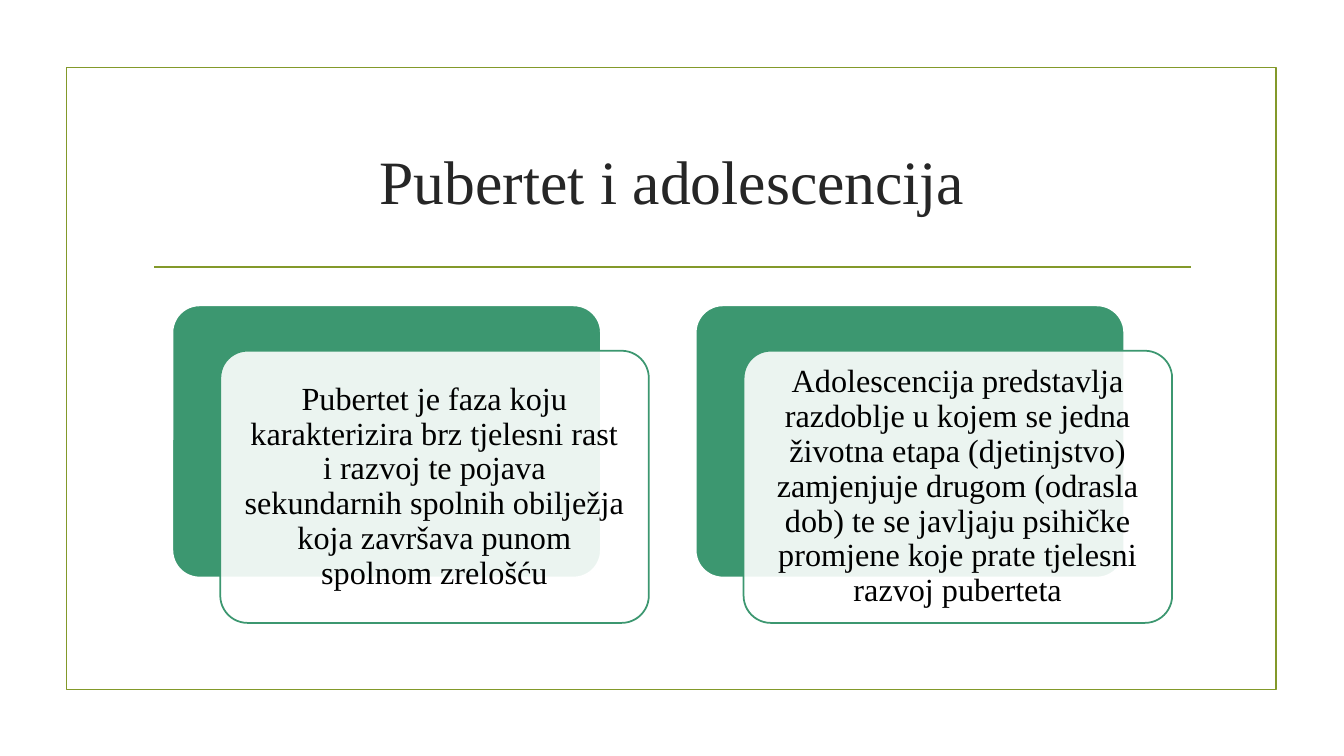
from lxml import etree
from pptx import Presentation
from pptx.dml.color import RGBColor
from pptx.enum import shapes as kinds
from pptx.enum import text as txt
from pptx.oxml.ns import qn
from pptx.util import Inches, Pt

OLIVE = RGBColor(0x83, 0x99, 0x2A)
GREEN = RGBColor(0x3C, 0x97, 0x70)
WHITE = RGBColor(0xFF, 0xFF, 0xFF)
BLACK = RGBColor(0, 0, 0)
CHARCOAL = RGBColor(0x26, 0x26, 0x26)
FONT = "Times New Roman"

DEFINITIONS = [
    "Pubertet je faza koju karakterizira brz tjelesni rast i razvoj te pojava "
    "sekundarnih spolnih obilježja koja završava punom spolnom zrelošću",
    "Adolescencija predstavlja razdoblje u kojem se jedna životna etapa "
    "(djetinjstvo) zamjenjuje drugom (odrasla dob) te se javljaju psihičke "
    "promjene koje prate tjelesni razvoj puberteta",
]


def style_outline(item, color):
    item.line.color.rgb = color
    item.line.width = Pt(1.25)


def style_text(frame, words, size, color):
    frame.text = words
    frame.word_wrap = True
    frame.auto_size = txt.MSO_AUTO_SIZE.NONE
    frame.vertical_anchor = txt.MSO_ANCHOR.MIDDLE
    paragraph = frame.paragraphs[0]
    paragraph.alignment = txt.PP_ALIGN.CENTER
    font = paragraph.runs[0].font
    font.name = FONT
    font.size = Pt(size)
    font.color.rgb = color
    return paragraph


def add_frame(slide, left, top, width, height):
    border = slide.shapes.add_shape(
        kinds.MSO_SHAPE.RECTANGLE,
        Inches(left), Inches(top), Inches(width), Inches(height))
    border.shadow.inherit = False
    border.fill.background()
    style_outline(border, OLIVE)
    rule_y = Inches(top + 1.98)
    rule = slide.shapes.add_connector(
        kinds.MSO_CONNECTOR.STRAIGHT,
        Inches(left + 0.87), rule_y, Inches(left + width - 0.85), rule_y)
    style_outline(rule, OLIVE)
    etree.SubElement(rule._element.spPr, qn("a:effectLst"))


def add_title(slide, left, top, width, height):
    title = slide.shapes.title
    title.left, title.top = Inches(left), Inches(top)
    title.width, title.height = Inches(width), Inches(height)
    style_text(title.text_frame, "Pubertet i adolescencija", 44, CHARCOAL)


def add_panel(slide, left, top, width, height, fill, outline):
    panel = slide.shapes.add_shape(
        kinds.MSO_SHAPE.ROUNDED_RECTANGLE,
        Inches(left), Inches(top), Inches(width), Inches(height))
    panel.adjustments[0] = 0.1
    panel.shadow.inherit = False
    panel.fill.solid()
    panel.fill.fore_color.rgb = fill
    style_outline(panel, outline)
    return panel


def add_definition(slide, left, top, width, height, words):
    add_panel(slide, left, top, width, height, GREEN, WHITE)
    card = add_panel(slide, left + 0.475, top + 0.45, width, height, WHITE, GREEN)
    tint = card._element.spPr.find(qn("a:solidFill"))[0]
    etree.SubElement(tint, qn("a:alpha")).set("val", "90000")
    frame = card.text_frame
    frame.margin_left = frame.margin_right = Inches(0.14)
    frame.margin_top = frame.margin_bottom = Inches(0.1)
    style_text(frame, words, 23, BLACK).line_spacing = 0.9


def main():
    deck = Presentation()
    deck.slide_width, deck.slide_height = Inches(13.33), Inches(7.5)
    slide = deck.slides.add_slide(deck.slide_layouts[5])
    add_frame(slide, 0.66, 0.67, 12, 6.17)
    add_title(slide, 1.42, 1.07, 10.5, 1.43)
    for column, words in enumerate(DEFINITIONS):
        add_definition(slide, 1.71 + column * 5.19, 3.03, 4.25, 2.7, words)
    deck.save("out.pptx")


if __name__ == "__main__":
    main()
